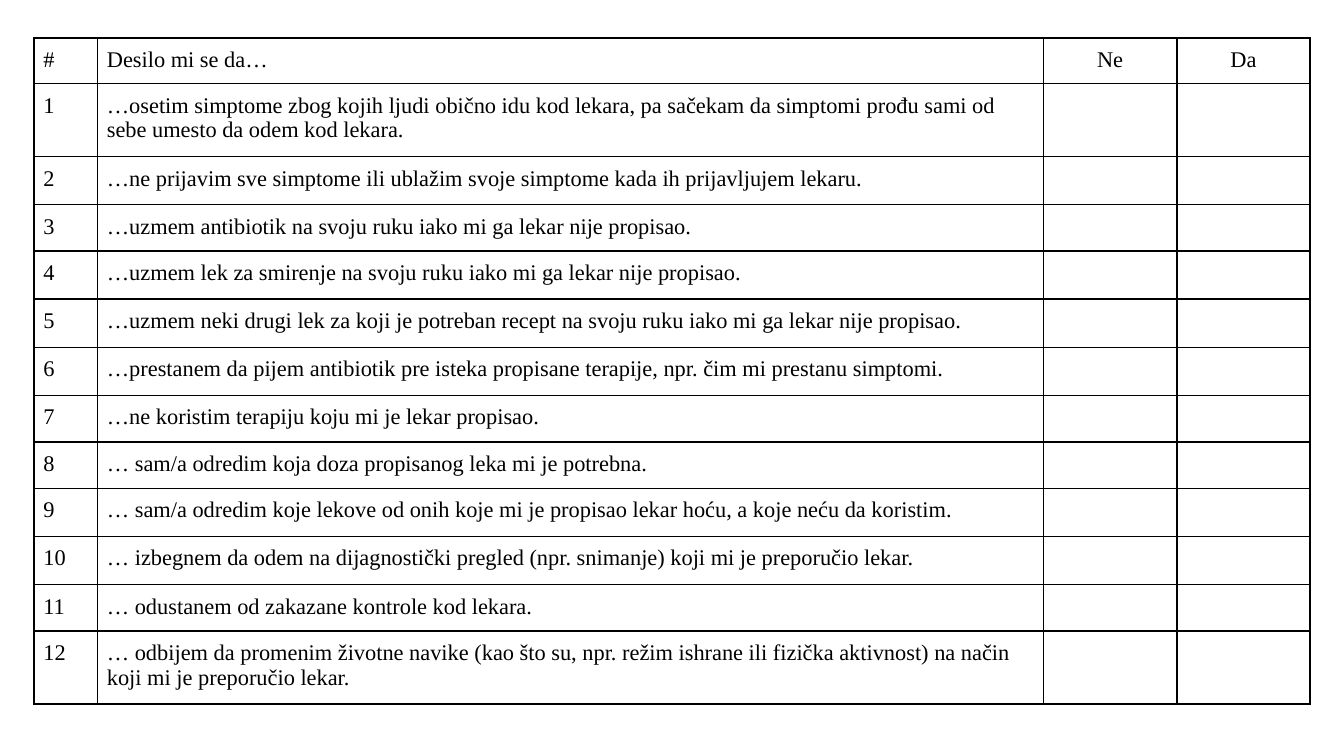
from lxml import etree
from pptx import Presentation
from pptx import util as u
from pptx.dml.color import RGBColor
from pptx.enum import text
from pptx.oxml.ns import qn

COLORS = {"ink": "000000", "paper": "FFFFFF"}
FONT = "Times New Roman"
FONT_SIZE = u.Pt(12)
INSET = u.Cm(0.18)
COLUMN_WIDTHS = [1.2, 17.88, 2.52, 2.52]
LOW, MIDDLE, HIGH = 0.86, 0.91, 1.38

HEADER = ["#", "Desilo mi se da…", "Ne", "Da"]
STATEMENTS = [
    (HIGH, "…osetim simptome zbog kojih ljudi obično idu kod lekara, pa sačekam da simptomi "
           "prođu sami od sebe umesto da odem kod lekara."),
    (MIDDLE, "…ne prijavim sve simptome ili ublažim svoje simptome kada ih prijavljujem lekaru."),
    (LOW, "…uzmem antibiotik na svoju ruku iako mi ga lekar nije propisao."),
    (MIDDLE, "…uzmem lek za smirenje na svoju ruku iako mi ga lekar nije propisao."),
    (MIDDLE, "…uzmem neki drugi lek za koji je potreban recept na svoju ruku iako mi ga lekar "
             "nije propisao."),
    (MIDDLE, "…prestanem da pijem antibiotik pre isteka propisane terapije, npr. čim mi "
             "prestanu simptomi."),
    (LOW, "…ne koristim terapiju koju mi je lekar propisao."),
    (LOW, "… sam/a odredim koja doza propisanog leka mi je potrebna."),
    (MIDDLE, "… sam/a odredim koje lekove od onih koje mi je propisao lekar hoću, a koje neću "
             "da koristim."),
    (MIDDLE, "… izbegnem da odem na dijagnostički pregled (npr. snimanje) koji mi je "
             "preporučio lekar."),
    (LOW, "… odustanem od zakazane kontrole kod lekara."),
    (HIGH, "… odbijem da promenim životne navike (kao što su, npr. režim ishrane ili fizička "
           "aktivnost) na način koji mi je preporučio lekar."),
]
rows = [(LOW, HEADER)]
for number, (height, statement) in enumerate(STATEMENTS, start=1):
    rows.append((height, [str(number), statement, "", ""]))


def add_borders(cell):
    """Draw a thin line on all four sides; must run before the cell is filled."""
    properties = cell._tc.get_or_add_tcPr()
    for side in ("a:lnL", "a:lnR", "a:lnT", "a:lnB"):
        line = etree.SubElement(properties, qn(side), w=str(u.Pt(1)))
        fill = etree.SubElement(line, qn("a:solidFill"))
        etree.SubElement(fill, qn("a:srgbClr"), val=COLORS["ink"])


presentation = Presentation()
presentation.slide_width = u.Cm(25.4)
presentation.slide_height = u.Cm(14.29)
slide = presentation.slides.add_slide(presentation.slide_layouts[6])

table = slide.shapes.add_table(
    len(rows), len(COLUMN_WIDTHS), u.Cm(0.64), u.Cm(0.72),
    u.Cm(sum(COLUMN_WIDTHS)), u.Cm(sum(height for height, _ in rows)),
).table
table.first_row = False
table.horz_banding = False
for column, width in zip(table.columns, COLUMN_WIDTHS):
    column.width = u.Cm(width)

for row, (height, contents) in zip(table.rows, rows):
    row.height = u.Cm(height)
    for index, (cell, content) in enumerate(zip(row.cells, contents)):
        cell.margin_left = cell.margin_right = INSET
        cell.margin_top = cell.margin_bottom = INSET
        add_borders(cell)
        cell.fill.solid()
        cell.fill.fore_color.rgb = RGBColor.from_string(COLORS["paper"])
        paragraph = cell.text_frame.paragraphs[0]
        if index >= 2:
            paragraph.alignment = text.PP_ALIGN.CENTER
        if content:
            run = paragraph.add_run()
            run.text = content
            run.font.name = FONT
            run.font.size = FONT_SIZE
            run.font.color.rgb = RGBColor.from_string(COLORS["ink"])
        else:
            # Keeps an empty answer cell from stretching its row
            etree.SubElement(paragraph._p, qn("a:endParaRPr"), sz=str(FONT_SIZE.centipoints))

presentation.save("out.pptx")
